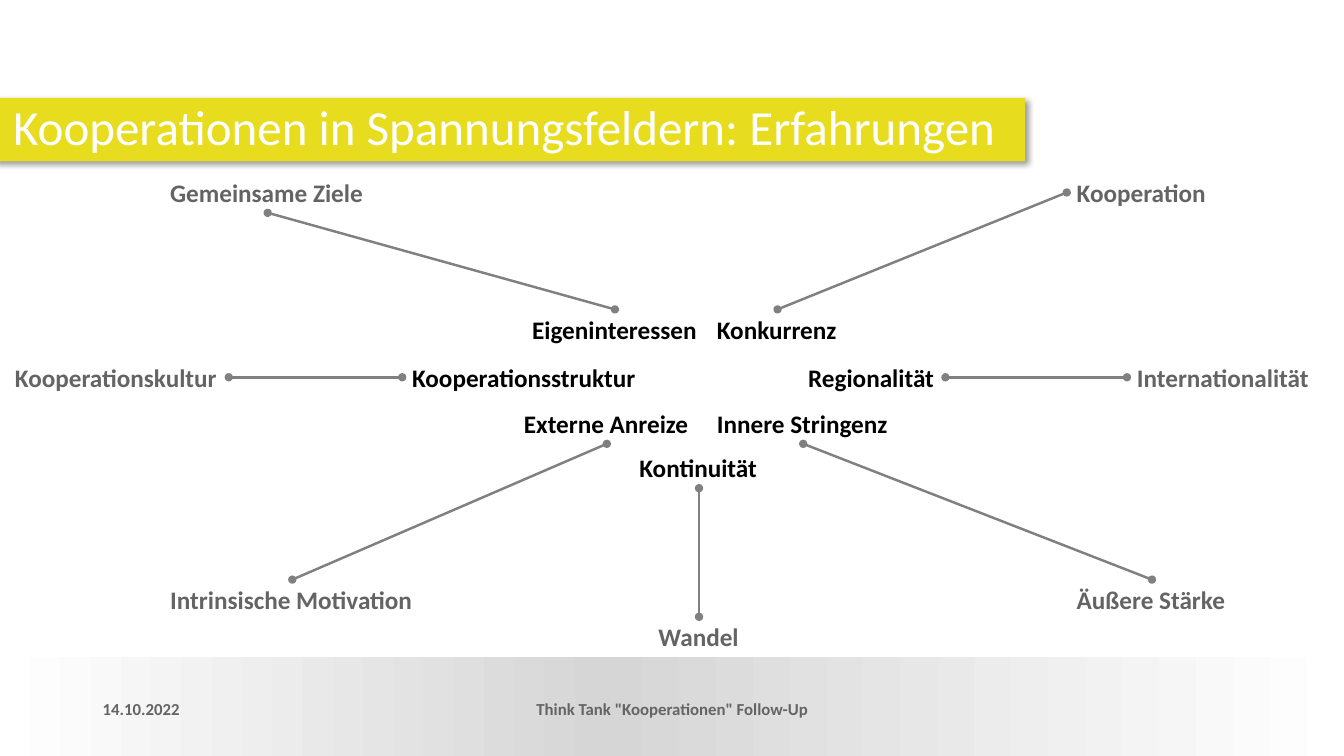
from dataclasses import dataclass

import lxml.etree
import pptx
import pptx.dml.color
import pptx.enum.shapes
import pptx.enum.text
import pptx.oxml
import pptx.oxml.ns
import pptx.util

Pt = pptx.util.Pt
RGBColor = pptx.dml.color.RGBColor
Align = pptx.enum.text.PP_ALIGN
Anchor = pptx.enum.text.MSO_ANCHOR
qn = pptx.oxml.ns.qn
TOP, LEFT, BOTTOM, RIGHT = range(4)


@dataclass(frozen=True)
class Theme:
    font: str = "Calibri"
    banner: str = "E8DC1F"
    white: str = "FFFFFF"
    inner: str = "000000"
    outer: str = "646464"
    line: str = "808080"
    band: str = "D6D6D6"
    title_size: float = 35
    label_size: float = 18
    footer_size: float = 12
    line_width: float = 1.75


@dataclass(frozen=True)
class Label:
    text: str
    left: float
    top: float
    width: float
    side: int


@dataclass(frozen=True)
class Tension:
    outer: Label
    inner: Label


@dataclass(frozen=True)
class Footer:
    text: str
    left: float
    width: float
    align: Align


THEME = Theme()
SLIDE_WIDTH, SLIDE_HEIGHT = 960, 540
LABEL_HEIGHT = 29
BAND_TOP = 469.5
ROW_TOP, ROW_UPPER, ROW_MIDDLE, ROW_LOWER, ROW_BOTTOM = 123, 221, 255, 288, 414
OUTER_LEFT, OUTER_RIGHT, INNER_RIGHT = 114.5, 762, 505

TENSIONS = [
    Tension(Label("Gemeinsame Ziele", OUTER_LEFT, ROW_TOP, 153.4, BOTTOM),
            Label("Eigeninteressen", 373, ROW_UPPER, 132.5, TOP)),
    Tension(Label("Kooperation", OUTER_RIGHT, ROW_TOP, 107.3, LEFT),
            Label("Konkurrenz", INNER_RIGHT, ROW_UPPER, 100.8, TOP)),
    Tension(Label("Wandel", 463.3, 440.6, 72, TOP),
            Label("Kontinuität", 449.6, 319.7, 99.4, BOTTOM)),
    Tension(Label("Intrinsische Motivation", OUTER_LEFT, ROW_BOTTOM, 188.6, TOP),
            Label("Externe Anreize", 367.2, ROW_LOWER, 132.5, BOTTOM)),
    Tension(Label("Äußere Stärke", OUTER_RIGHT, ROW_BOTTOM, 121.7, TOP),
            Label("Innere Stringenz", INNER_RIGHT, ROW_LOWER, 137.5, BOTTOM)),
    Tension(Label("Internationalität", 805, ROW_MIDDLE, 138.2, LEFT),
            Label("Regionalität", 570.2, ROW_MIDDLE, 105.1, RIGHT)),
    Tension(Label("Kooperationskultur", 3.6, ROW_MIDDLE, 159.8, RIGHT),
            Label("Kooperationsstruktur", 287.3, ROW_MIDDLE, 175, LEFT)),
]
FOOTERS = [
    Footer("14.10.2022", 66.2, 216, Align.LEFT),
    Footer('Think Tank "Kooperationen" Follow-Up', 345.6, 269.3, Align.CENTER),
]


def write(box, text: str, size: float, color: str, bold: bool = True, align: Align = Align.LEFT):
    para = box.text_frame.paragraphs[0]
    para.text = text
    para.alignment = align
    para.font.name = THEME.font
    para.font.size = Pt(size)
    para.font.bold = bold
    para.font.color.rgb = RGBColor.from_string(color)
    return para


def add_rectangle(page, left: float, top: float, width: float, height: float):
    shape = page.shapes.add_shape(pptx.enum.shapes.MSO_SHAPE.RECTANGLE,
                                  Pt(left), Pt(top), Pt(width), Pt(height))
    shape.shadow.inherit = False
    shape.line.fill.background()
    return shape


def add_band(page) -> None:
    band = add_rectangle(page, 0, BAND_TOP, SLIDE_WIDTH, SLIDE_HEIGHT - BAND_TOP)
    band.fill.gradient()
    band.fill.gradient_angle = 0
    stops = band.fill._fill._gradFill.find(qn("a:gsLst"))
    for stop in list(stops):
        stops.remove(stop)
    for position, color in ((0, THEME.white), (45, THEME.band), (100, THEME.white)):
        stop = lxml.etree.SubElement(stops, qn("a:gs"), pos=str(position * 1000))
        lxml.etree.SubElement(stop, qn("a:srgbClr"), val=color)


def add_title(page) -> None:
    banner = add_rectangle(page, -5, 70, 737.3, 45.4)
    banner.fill.solid()
    banner.fill.fore_color.rgb = RGBColor.from_string(THEME.banner)
    effects = banner._element.spPr.find(qn("a:effectLst"))
    shadow = lxml.etree.SubElement(effects, qn("a:outerShdw"), blurRad=str(Pt(4)),
                                   dist=str(Pt(3)), dir="2700000", algn="tl", rotWithShape="0")
    color = lxml.etree.SubElement(shadow, qn("a:srgbClr"), val="000000")
    lxml.etree.SubElement(color, qn("a:alpha"), val="40000")
    frame = banner.text_frame
    frame.word_wrap = True
    frame.vertical_anchor = Anchor.MIDDLE
    frame.margin_left = Pt(14.4)
    frame.margin_right = Pt(7.2)
    para = write(banner, "Kooperationen in Spannungsfeldern: Erfahrungen",
                 THEME.title_size, THEME.white, bold=False)
    para.line_spacing = 0.9


def add_footer(page, footer: Footer) -> None:
    box = page.shapes.add_textbox(Pt(footer.left), Pt(491.8), Pt(footer.width), Pt(LABEL_HEIGHT))
    box.text_frame.word_wrap = True
    box.text_frame.vertical_anchor = Anchor.MIDDLE
    write(box, footer.text, THEME.footer_size, THEME.outer, align=footer.align)


def add_label(page, label: Label, color: str):
    box = page.shapes.add_textbox(Pt(label.left), Pt(label.top), Pt(label.width), Pt(LABEL_HEIGHT))
    box.text_frame.word_wrap = False
    box.text_frame.auto_size = pptx.enum.text.MSO_AUTO_SIZE.SHAPE_TO_FIT_TEXT
    write(box, label.text, THEME.label_size, color)
    return box


def add_tension(page, tension: Tension) -> None:
    outer = add_label(page, tension.outer, THEME.outer)
    inner = add_label(page, tension.inner, THEME.inner)
    link = page.shapes.add_connector(pptx.enum.shapes.MSO_CONNECTOR.STRAIGHT, 0, 0, 0, 0)
    link.begin_connect(outer, tension.outer.side)
    link.end_connect(inner, tension.inner.side)
    link.line.width = Pt(THEME.line_width)
    link.line.color.rgb = RGBColor.from_string(THEME.line)
    for end in ("a:headEnd", "a:tailEnd"):
        lxml.etree.SubElement(link.line._get_or_add_ln(), qn(end), type="oval")
    lxml.etree.SubElement(link._element.spPr, qn("a:effectLst"))


def main() -> None:
    """Build the slide on the fields of tension in cooperation."""
    deck = pptx.Presentation()
    deck.slide_width, deck.slide_height = Pt(SLIDE_WIDTH), Pt(SLIDE_HEIGHT)
    page = deck.slides.add_slide(deck.slide_layouts[6])
    add_band(page)
    add_title(page)
    for footer in FOOTERS:
        add_footer(page, footer)
    for tension in TENSIONS:
        add_tension(page, tension)
    deck.save("out.pptx")


if __name__ == "__main__":
    main()
